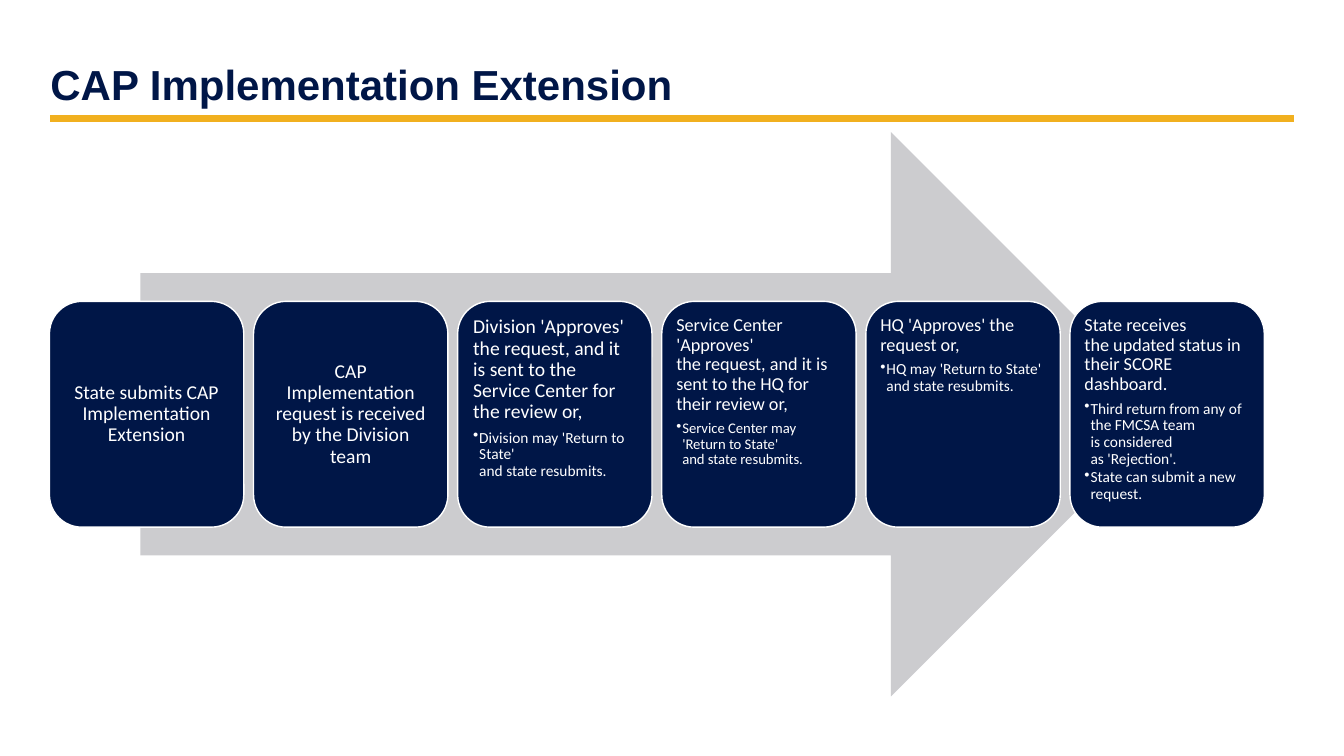
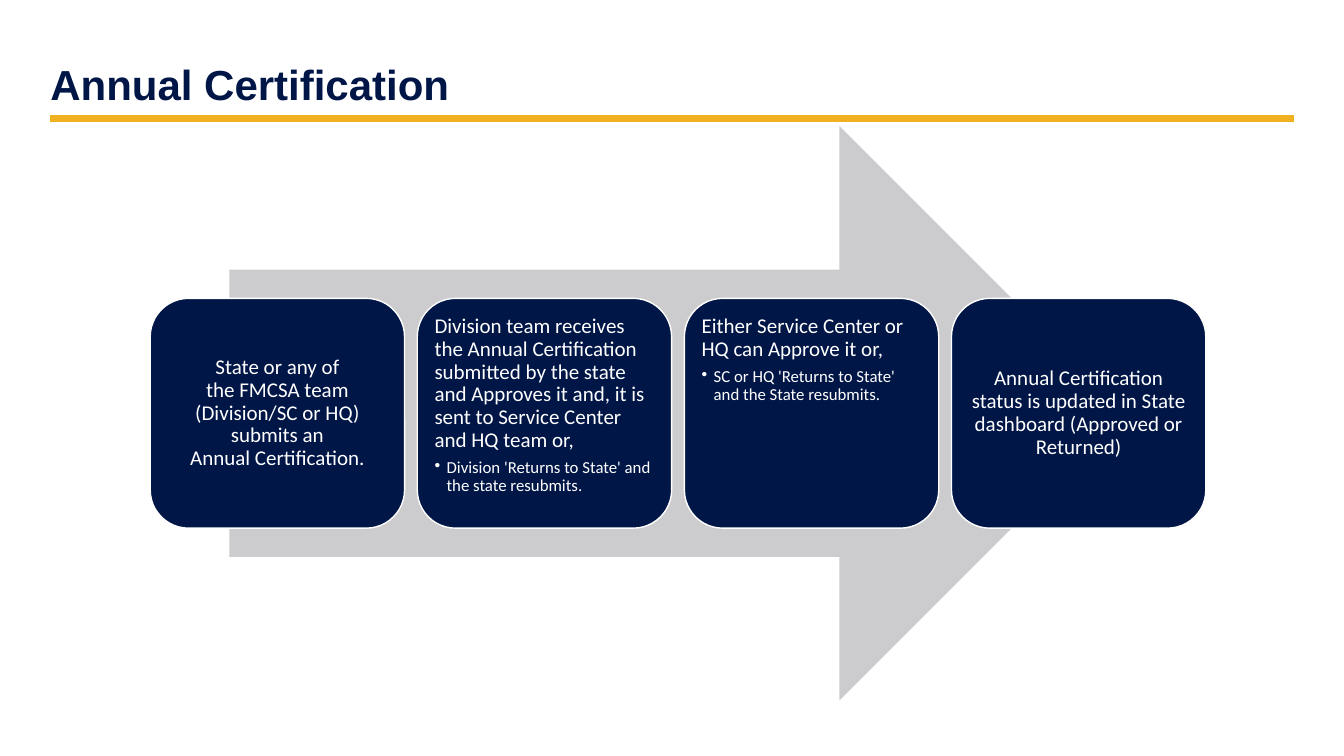
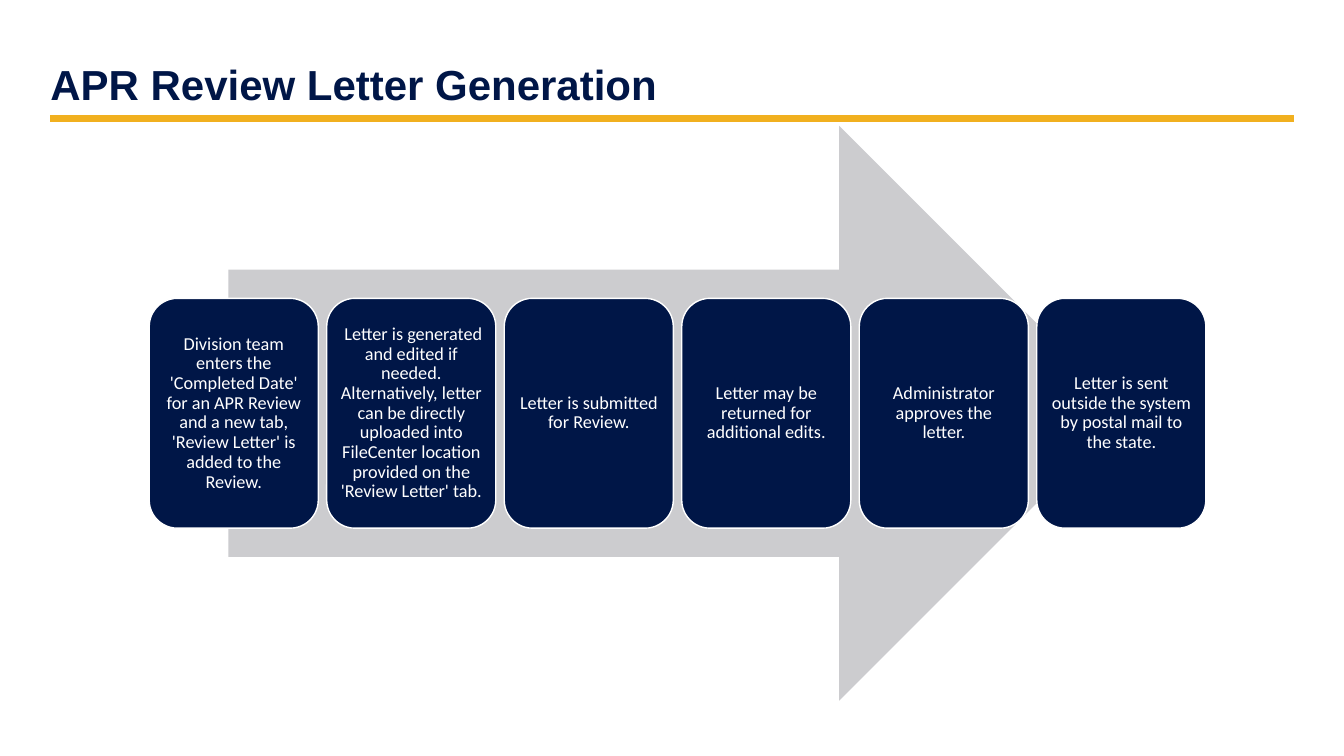
"""Build three process slides: a ruled title, and cards set along a wide arrow."""
from dataclasses import dataclass

from lxml.etree import SubElement
from pptx import Presentation
from pptx.dml.color import RGBColor
from pptx.enum.shapes import MSO_CONNECTOR, MSO_SHAPE
from pptx.enum.text import MSO_ANCHOR, PP_ALIGN
from pptx.oxml.ns import qn
from pptx.util import Inches, Pt


@dataclass(frozen=True)
class Theme:
    navy: RGBColor = RGBColor(0x00, 0x16, 0x47)
    gold: RGBColor = RGBColor(0xF1, 0xB0, 0x1F)
    grey: RGBColor = RGBColor(0xCC, 0xCC, 0xCF)
    white: RGBColor = RGBColor(0xFF, 0xFF, 0xFF)
    title_font: str = "Arial"
    body_font: str = "Calibri"
    title_size: float = 30
    rule_width: float = 5
    line_spacing: float = 0.9


T = Theme()
NBSP = chr(160)

SLIDES = [
    {
        "title": "CAP Implementation Extension",
        "left": 0.49, "width": 12.05, "top": 1.31, "height": 5.6, "indent": 0.06,
        "cards": [
            (14, 11, "State submits CAP Implementation Extension", []),
            (14, 11, "CAP Implementation request is received by the Division team", []),
            (14, 11, "Division 'Approves' the~request, and it is sent to the "
             "Service~Center for the review or,",
             ["Division~may~'Return~to State' and~state~resubmits."]),
            (13, 10.5, "Service Center 'Approves' the~request, and it is sent to "
             "the HQ for their review or,",
             ["Service~Center~may 'Return to~State' and~state~resubmits."]),
            (13, 11, "HQ 'Approves' the request or,",
             ["HQ~may 'Return~to State' and~state~resubmits."]),
            (13, 11, "State receives the~updated status~in their SCORE dashboard.",
             ["Third return~from any of the~FMCSA team is~considered as~'Rejection'.",
              "State~can submit a~new request."]),
        ],
    },
    {
        "title": "Annual Certification",
        "left": 1.49, "width": 10.47, "top": 1.25, "height": 5.7, "indent": 0.12,
        "cards": [
            (15, 12, "State~or any of the~FMCSA team (Division/SC or HQ) submits~an "
             "Annual~Certification.", []),
            (15, 12, "Division team receives the Annual Certification submitted by "
             "the state and Approves it and, it is sent to Service Center and HQ "
             "team or,",
             ["Division~'Returns~to State' and the~state resubmits."]),
            (15, 12, "Either Service Center or HQ can Approve it or,",
             ["SC or HQ~'Returns~to~State' and the~State resubmits."]),
            (15, 12, "Annual Certification status is~updated in~State dashboard "
             "(Approved or Returned)", []),
        ],
    },
    {
        "title": "APR Review Letter Generation",
        "left": 1.48, "width": 10.48, "top": 1.25, "height": 5.7, "indent": 0.12,
        "cards": [
            (13, 11, "Division team enters the 'Completed Date' for an APR Review and "
             "a new tab, 'Review Letter' is added to the Review.", []),
            (13, 11, "~Letter is generated and edited if needed. Alternatively, letter "
             "can~be directly uploaded into FileCenter location provided on the "
             "'Review Letter' tab.", []),
            (13, 11, "Letter is submitted for Review.", []),
            (13, 11, "Letter may be returned for additional edits.", []),
            (13, 11, "Administrator approves the letter.", []),
            (13, 11, "Letter is sent outside the system by postal mail to the state.", []),
        ],
    },
]


def write(p, text, font, size, color, bold=False):
    p.line_spacing = T.line_spacing
    r = p.add_run()
    r.text = text.replace("~", NBSP)
    formats = {"name": font, "size": Pt(size), "bold": bold}
    for name, value in formats.items():
        setattr(r.font, name, value)
    r.font.color.rgb = color


def add_box(s, preset, left, top, width, height, fill):
    sp = s.shapes.add_shape(preset, Inches(left), Inches(top), Inches(width), Inches(height))
    sp.shadow.inherit = False
    sp.fill.solid()
    sp.fill.fore_color.rgb = fill
    sp.line.fill.background()
    return sp


prs = Presentation()
prs.slide_width, prs.slide_height = Inches(13.33), Inches(7.5)
layout = prs.slide_layouts[5]

for data in SLIDES:
    s = prs.slides.add_slide(layout)
    title = s.shapes.title
    place = {"left": 0.5, "top": 0.14, "width": 12.33, "height": 1}
    for name, value in place.items():
        setattr(title, name, Inches(value))
    tf = title.text_frame
    frame = {"margin_left": 0, "margin_right": Inches(0.1), "margin_top": Inches(0.05),
             "margin_bottom": Inches(0.05), "vertical_anchor": MSO_ANCHOR.BOTTOM,
             "word_wrap": True}
    for name, value in frame.items():
        setattr(tf, name, value)
    tf.paragraphs[0].alignment = PP_ALIGN.LEFT
    write(tf.paragraphs[0], data["title"], T.title_font, T.title_size, T.navy, True)

    rule = s.shapes.add_connector(MSO_CONNECTOR.STRAIGHT, Inches(0.5), Inches(1.18),
                                  Inches(12.83), Inches(1.18))
    rule.line.color.rgb = T.gold
    rule.line.width = Pt(T.rule_width)
    SubElement(rule.element.spPr, qn("a:effectLst"))

    left, top, width, height = (data[k] for k in ("left", "top", "width", "height"))
    add_box(s, MSO_SHAPE.RIGHT_ARROW, left + width * 0.075, top, width * 0.85, height, T.grey)

    n = len(data["cards"])
    card_w = width / (n + (n - 1) * 0.05)
    for i, (size, sub_size, heading, bullets) in enumerate(data["cards"]):
        sp = add_box(s, MSO_SHAPE.ROUNDED_RECTANGLE, left + i * card_w * 1.05,
                     top + height * 0.3, card_w, height * 0.4, T.navy)
        sp.line.color.rgb = T.white
        sp.line.width = Pt(1)
        tf = sp.text_frame
        tf.word_wrap = True
        tf.vertical_anchor = MSO_ANCHOR.TOP if bullets else MSO_ANCHOR.MIDDLE
        for side in ("left", "right", "top", "bottom"):
            setattr(tf, f"margin_{side}", Inches(0.06 if size > 13 else 0.05))
        p = tf.paragraphs[0]
        p.alignment = PP_ALIGN.LEFT if bullets else PP_ALIGN.CENTER
        write(p, heading, T.body_font, size, T.white)
        if bullets:
            p.space_after = Pt(round(size * 0.35, 1))
        for bullet in bullets:
            p = tf.add_paragraph()
            p.alignment = PP_ALIGN.LEFT
            write(p, bullet, T.body_font, sub_size, T.white)
            p.space_after = Pt(round(sub_size * 0.15, 1))
            pPr = p._p.get_or_add_pPr()
            pPr.set("marL", str(Inches(data["indent"])))
            pPr.set("indent", str(-Inches(data["indent"])))
            SubElement(pPr, qn("a:buChar")).set("char", "•")

prs.save("out.pptx")
